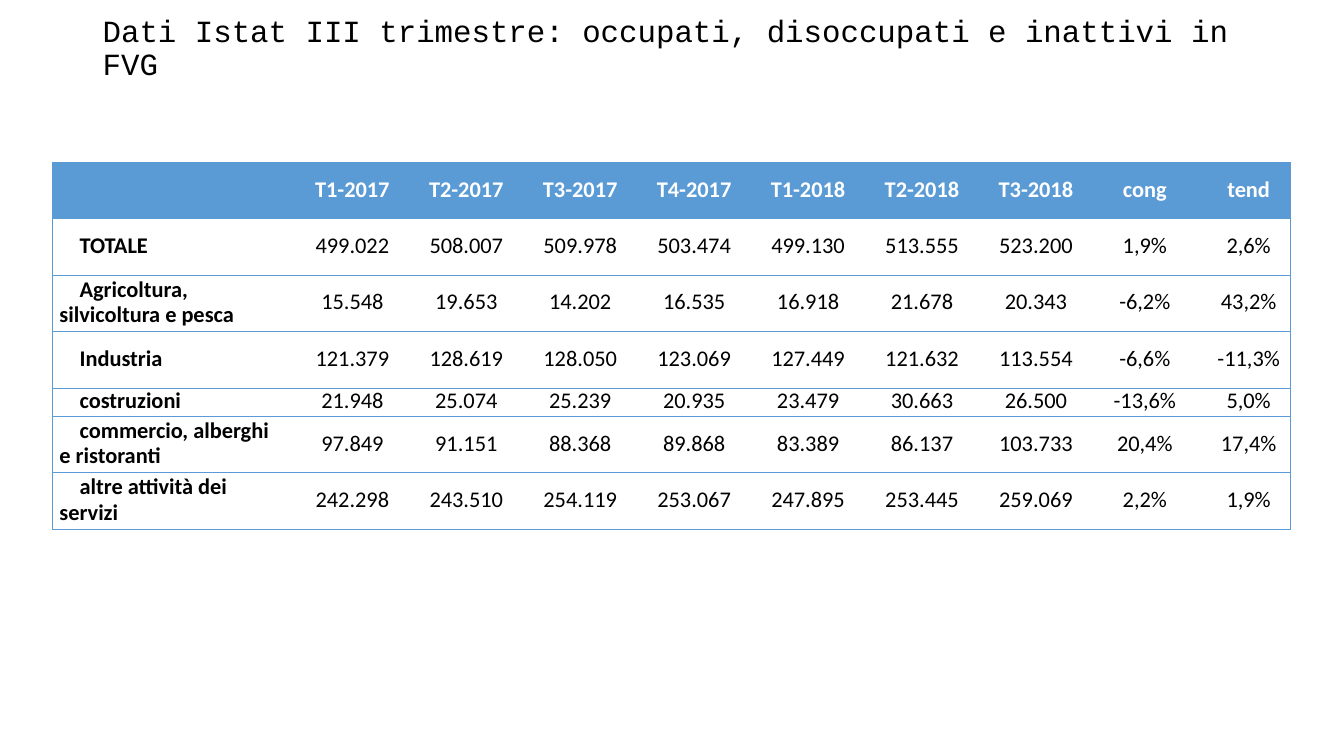
"""Build a slide with a table of employment by sector in FVG."""
from lxml import etree
from pptx import Presentation, util as u
from pptx.dml.color import RGBColor
from pptx.enum import text
from pptx.oxml import ns

PX = 9144
BLUE = RGBColor(0x5B, 0x9B, 0xD5)
WHITE = RGBColor(255, 255, 255)
BLACK = RGBColor(0, 0, 0)
TITLE = "Dati Istat III trimestre: occupati, disoccupati e inattivi in FVG"
HEAD = ["", "T1-2017", "T2-2017", "T3-2017", "T4-2017",
        "T1-2018", "T2-2018", "T3-2018", "cong", "tend"]
ROWS = [
    ["TOTALE", "499.022", "508.007", "509.978", "503.474",
     "499.130", "513.555", "523.200", "1,9%", "2,6%"],
    ["Agricoltura, silvicoltura e pesca", "15.548", "19.653", "14.202", "16.535",
     "16.918", "21.678", "20.343", "-6,2%", "43,2%"],
    ["Industria", "121.379", "128.619", "128.050", "123.069",
     "127.449", "121.632", "113.554", "-6,6%", "-11,3%"],
    ["costruzioni", "21.948", "25.074", "25.239", "20.935",
     "23.479", "30.663", "26.500", "-13,6%", "5,0%"],
    ["commercio, alberghi e ristoranti", "97.849", "91.151", "88.368", "89.868",
     "83.389", "86.137", "103.733", "20,4%", "17,4%"],
    ["altre attività dei servizi", "242.298", "243.510", "254.119", "253.067",
     "247.895", "253.445", "259.069", "2,2%", "1,9%"],
]
WIDTHS = [231] + [113] * 7 + [103] * 2
HEIGHTS = [56] * 4 + [28] + [56] * 2
INSETS = {"margin_left": 7 * PX, "margin_right": 7 * PX,
          "margin_top": 0, "margin_bottom": 0}


def apply(item, form):
    """Set each named value of a format on an item."""
    for name, val in form.items():
        setattr(item, name, val)


def write(frame, words, face, size, color, bold, para):
    """Put one styled paragraph in a text frame and return it."""
    line = frame.paragraphs[0]
    apply(line, para)
    if words:
        run = line.add_run()
        run.text = words
        apply(run.font, {"name": face, "size": u.Pt(size), "bold": bold})
        run.font.color.rgb = color
    return line


def title(slide):
    """Add the title box."""
    box = slide.shapes.add_textbox(*(n * PX for n in (92, 18, 1150, 62)))
    frame = box.text_frame
    apply(frame, {"word_wrap": True, "vertical_anchor": text.MSO_ANCHOR.MIDDLE})
    write(frame, TITLE, "Courier New", 22, BLACK, False, {"line_spacing": 0.9})


def border(cell, sides):
    """Draw the given sides of a cell and clear the others."""
    props = cell._tc.get_or_add_tcPr()
    for i, side in enumerate("LRTB"):
        line = etree.Element(ns.qn(f"a:ln{side}"), w=str(u.Pt(0.5)))
        if side in sides:
            fill = etree.SubElement(line, ns.qn("a:solidFill"))
            etree.SubElement(fill, ns.qn("a:srgbClr"), val=str(BLUE))
        else:
            etree.SubElement(line, ns.qn("a:noFill"))
        props.insert(i, line)


def fill(cell, words, row, col):
    """Style one cell by its place in the grid."""
    head = row == 0
    apply(cell, {**INSETS, "vertical_anchor": text.MSO_ANCHOR.MIDDLE})
    cell.fill.solid()
    cell.fill.fore_color.rgb = BLUE if head else WHITE
    align = text.PP_ALIGN.CENTER if head or col else text.PP_ALIGN.LEFT
    line = write(cell.text_frame, words, "Calibri", 16, WHITE if head else BLACK,
                 head or col == 0, {"alignment": align, "line_spacing": u.Pt(18)})
    line._p.get_or_add_pPr().set("indent", str(20 * PX))
    ends = {0: "L", len(HEAD) - 1: "R"}
    border(cell, "TB" + ends.get(col, ""))


def grid(slide):
    """Add the table of sectors by quarter."""
    data = [HEAD] + ROWS
    size = (n * PX for n in (52, 161, sum(WIDTHS), sum(HEIGHTS)))
    table = slide.shapes.add_table(len(data), len(HEAD), *size).table
    table.horz_banding = False
    for col, wide in zip(table.columns, WIDTHS):
        col.width = wide * PX
    for row, high in zip(table.rows, HEIGHTS):
        row.height = high * PX
    for r, row in enumerate(data):
        for c, words in enumerate(row):
            fill(table.cell(r, c), words, r, c)


def main():
    """Build and save the slide."""
    deck = Presentation()
    apply(deck, {"slide_width": 1333 * PX, "slide_height": 750 * PX})
    slide = deck.slides.add_slide(deck.slide_layouts[6])
    title(slide)
    grid(slide)
    deck.save("out.pptx")


if __name__ == "__main__":
    main()
